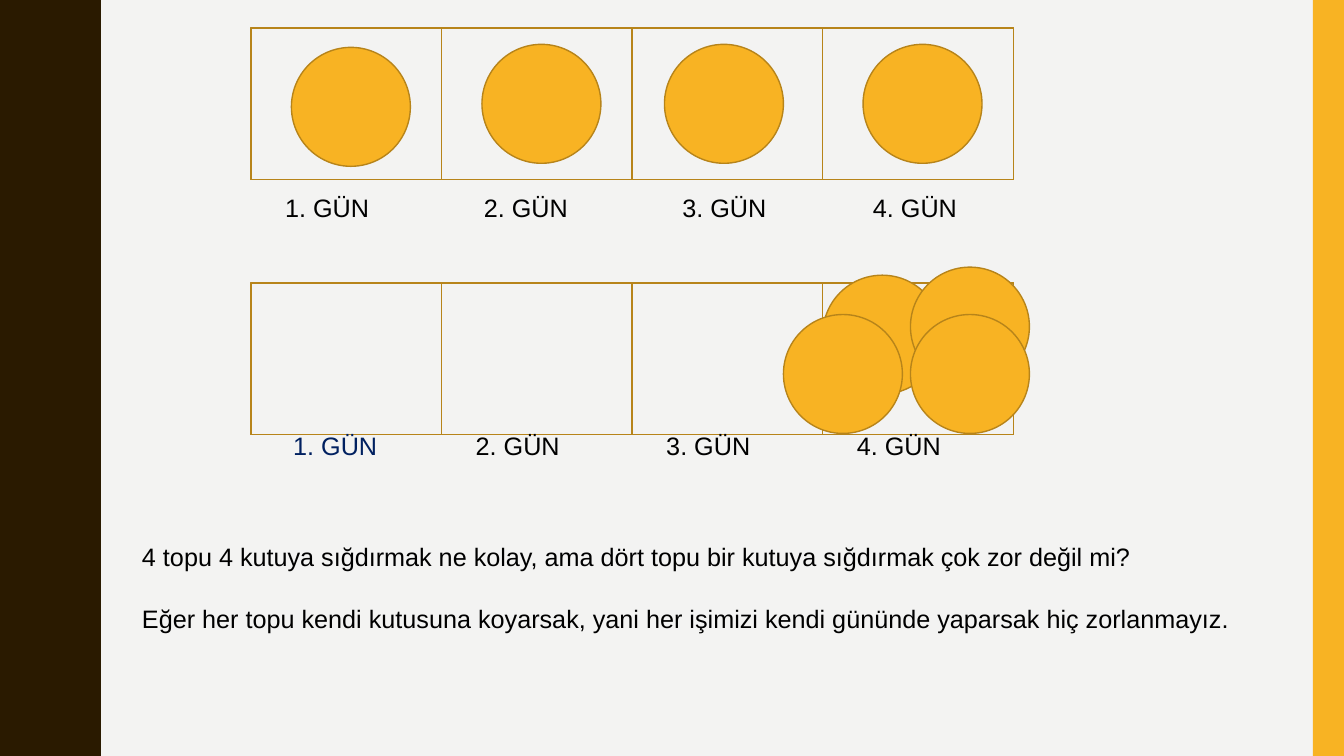
from pptx import Presentation
from pptx import util as u
from pptx.dml.color import RGBColor
from pptx.enum import shapes, text

PAPER = RGBColor(0xF3, 0xF3, 0xF2)
BROWN = RGBColor(0x2A, 0x1A, 0x00)
AMBER = RGBColor(0xF8, 0xB3, 0x23)
OCHRE = RGBColor(0xB7, 0x84, 0x1A)
BLACK = RGBColor(0x00, 0x00, 0x00)
NAVY = RGBColor(0x00, 0x20, 0x60)

WIDTH, HEIGHT = 13.33, 7.5
ROW_LEFT, CELL_WIDTH, CELL_HEIGHT, DAYS = 2.49, 1.89, 1.5, 4
BALL_SIZE = 1.18
WAVE_PERIOD = 1.5
# Trough to crest of the wavy edge; the other half is its mirror
WAVE_HALF = [(0.78, 0), (0.78, 0.07), (0.79, 0.14), (0.8, 0.2), (0.81, 0.25),
             (0.83, 0.29), (0.85, 0.33), (0.87, 0.38), (0.89, 0.42),
             (0.91, 0.46), (0.93, 0.5), (0.95, 0.55), (0.96, 0.61),
             (0.97, 0.68), (0.97, 0.75)]


class Painter:
    """Holds the style and the current slide."""

    font = {"name": "Arial", "size": u.Pt(18)}

    def __init__(self, page):
        self.page = page

    def style(self, shape, fill=None, line=None):
        shape.shadow.inherit = False
        if fill is None:
            shape.fill.background()
        else:
            shape.fill.solid()
            shape.fill.fore_color.rgb = fill
        if line is None:
            shape.line.fill.background()
        else:
            shape.line.color.rgb = line
            shape.line.width = u.Pt(1)

    def preset(self, kind, left, top, width, height, **look):
        shape = self.page.shapes.add_shape(
            kind, *map(u.Inches, (left, top, width, height)))
        self.style(shape, **look)

    def box(self, left, top, width, height, **look):
        self.preset(shapes.MSO_SHAPE.RECTANGLE, left, top, width, height, **look)

    def ball(self, left, top):
        self.preset(shapes.MSO_SHAPE.OVAL, left, top, BALL_SIZE, BALL_SIZE,
                    fill=AMBER, line=OCHRE)

    def outline(self, points, fill):
        builder = self.page.shapes.build_freeform(
            *points[0], scale=float(u.Inches(1)))
        builder.add_line_segments(points[1:], close=True)
        self.style(builder.convert_to_shape(), fill=fill)

    def words(self, left, top, width, height, lines, color=BLACK, gap=0):
        frame = self.page.shapes.add_textbox(
            *map(u.Inches, (left, top, width, height))).text_frame
        frame.word_wrap = True
        frame.auto_size = text.MSO_AUTO_SIZE.SHAPE_TO_FIT_TEXT
        for number, line in enumerate(lines):
            para = frame.add_paragraph() if number else frame.paragraphs[0]
            para.space_before = u.Pt(gap if number else 0)
            span = para.add_run()
            span.text = line
            for key, value in self.font.items():
                setattr(span.font, key, value)
            span.font.color.rgb = color

    def day_row(self, top, label_top, labels):
        self.box(ROW_LEFT, top, DAYS * CELL_WIDTH, CELL_HEIGHT, line=OCHRE)
        for day in range(DAYS):
            self.box(ROW_LEFT + day * CELL_WIDTH, top, CELL_WIDTH, CELL_HEIGHT,
                     line=OCHRE)
        for day, (left, color) in enumerate(labels, 1):
            self.words(left, label_top, 1.26, 0.4, [f"{day}. GÜN"], color)


def main():
    deck = Presentation()
    deck.slide_width, deck.slide_height = u.Inches(WIDTH), u.Inches(HEIGHT)
    page = deck.slides.add_slide(deck.slide_layouts[6])
    page.background.fill.solid()
    page.background.fill.fore_color.rgb = PAPER
    painter = Painter(page)

    # Wavy left edge and right band
    wave = WAVE_HALF + [(x, WAVE_PERIOD - y) for x, y in WAVE_HALF[-2::-1]]
    edge = [(x, y + turn * WAVE_PERIOD)
            for turn in range(int(HEIGHT / WAVE_PERIOD)) for x, y in wave]
    painter.outline([(0, 0), *edge, (0, HEIGHT)], BROWN)
    painter.box(13.02, 0, 0.31, HEIGHT, fill=AMBER)

    # One ball for each day
    painter.day_row(0.28, 1.86, [(2.73, BLACK), (4.7, BLACK),
                                 (6.67, BLACK), (8.56, BLACK)])
    for left, top in [(2.89, 0.47), (4.78, 0.44), (6.59, 0.44), (8.56, 0.44)]:
        painter.ball(left, top)

    # All balls on the last day
    painter.day_row(2.81, 4.22, [(2.81, NAVY), (4.62, BLACK),
                                 (6.51, BLACK), (8.4, BLACK)])
    for left, top in [(8.16, 2.73), (9.03, 2.65), (7.77, 3.12), (9.03, 3.12)]:
        painter.ball(left, top)

    # Conclusion
    painter.words(1.31, 5.32, 11.28, 1.01, [
        "4 topu 4 kutuya sığdırmak ne kolay, ama dört topu bir kutuya "
        "sığdırmak çok zor değil mi?",
        "Eğer her topu kendi kutusuna koyarsak, yani her işimizi kendi "
        "gününde yaparsak hiç zorlanmayız.",
    ], gap=23)

    deck.save("out.pptx")


if __name__ == "__main__":
    main()
